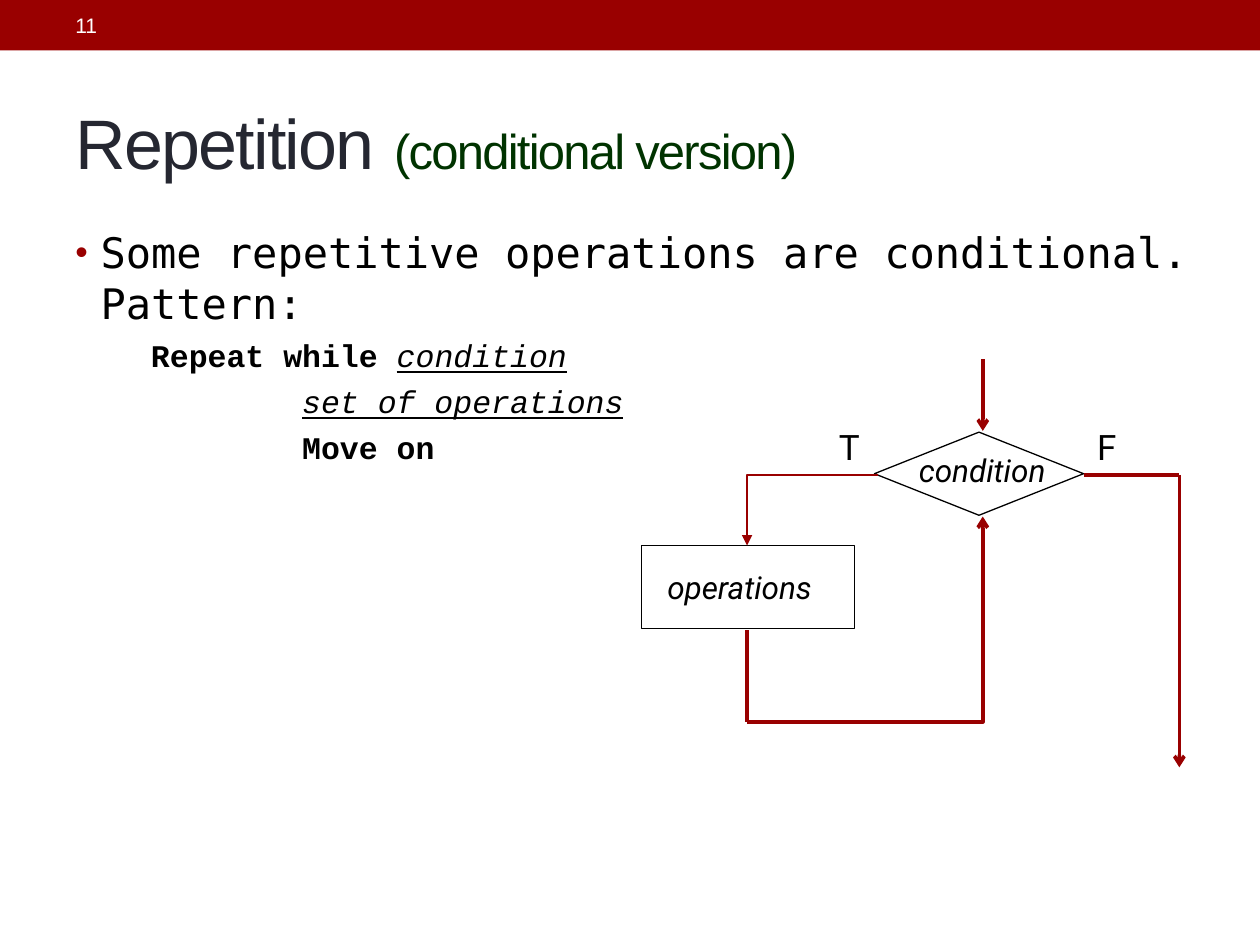
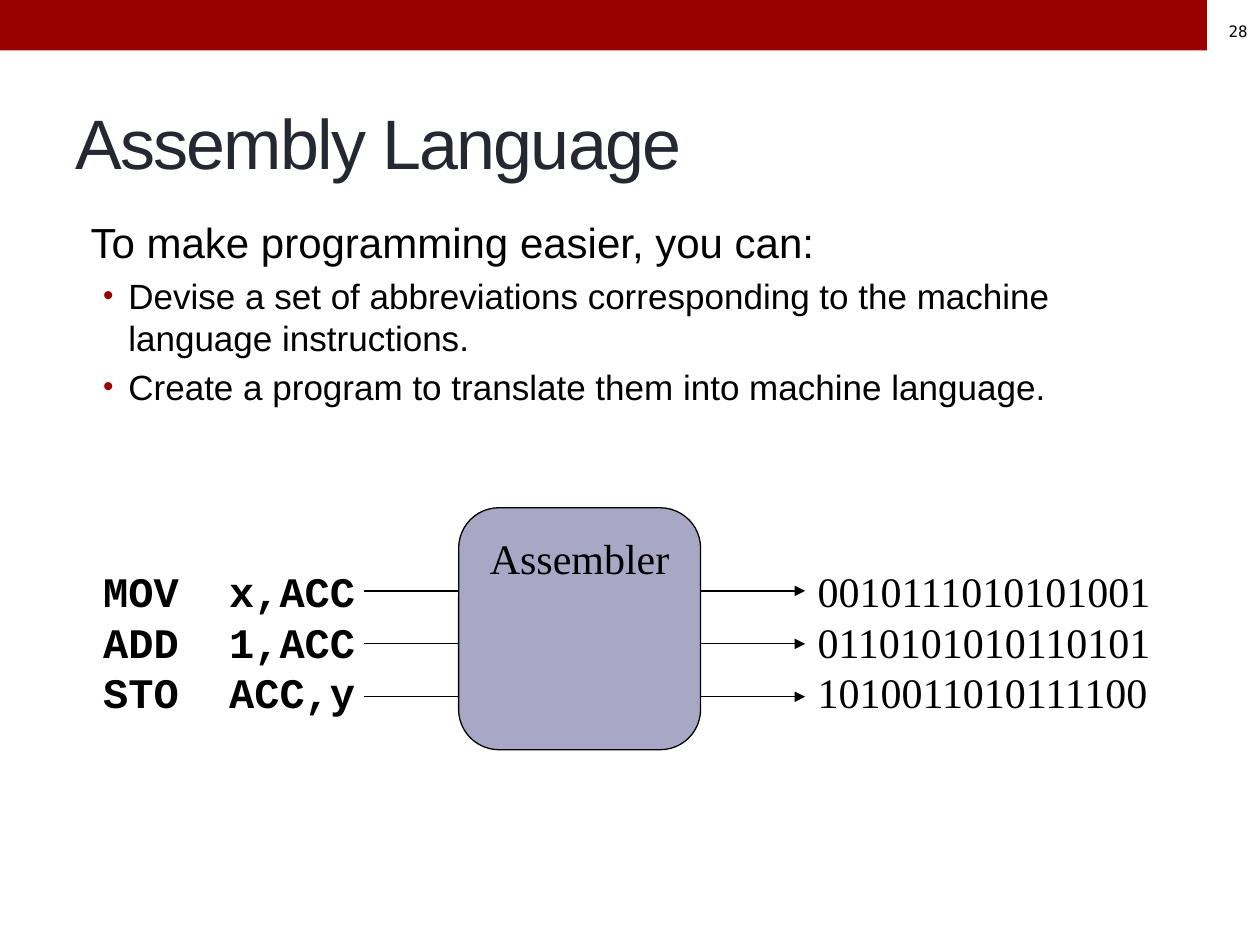
import pptx
import pptx.dml.color
import pptx.enum.shapes
import pptx.enum.text
import pptx.oxml
import pptx.oxml.ns
import pptx.util

COLORS = {
    "band": "990000", "title": "252731", "subtitle": "003300",
    "ink": "000000", "paper": "FFFFFF", "machine": "A8A8C6",
}
SANS, MONO, CODE = "Arial", "DejaVu Sans Mono", "Courier New"
LABEL, SERIF = "Roboto", "Times New Roman"

COLS, ROWS = 100, 75  # grid cells across and down the slide
THIN, THICK = 0.75, 2.08

SHAPES = pptx.enum.shapes.MSO_SHAPE
ANCHORS = pptx.enum.text.MSO_ANCHOR
ALIGNS = pptx.enum.text.PP_ALIGN
qn = pptx.oxml.ns.qn


def rgb(name):
    return pptx.dml.color.RGBColor.from_string(COLORS[name])


def add_xml(parent, tag, **attributes):
    child = parent.makeelement(qn(tag), attributes)
    parent.append(child)
    return child


def write(paragraph, text, size=24, font=SANS, color="ink", bold=False,
          italic=False, underline=False, tracking=0):
    """Add a formatted run to a paragraph."""
    run = paragraph.add_run()
    run.text = text
    run.font.size = pptx.util.Pt(size)
    run.font.name = font
    run.font.color.rgb = rgb(color)
    run.font.bold, run.font.italic, run.font.underline = bold, italic, underline
    if tracking:
        run._r.get_or_add_rPr().set("spc", str(tracking))


class Deck:
    """Holds the shared style and the slide being filled."""

    def __init__(self):
        self.show = pptx.Presentation()
        self.show.slide_width = pptx.util.Inches(10)
        self.show.slide_height = pptx.util.Inches(7.5)
        self.slide = None

    def x(self, columns):
        return round(self.show.slide_width * columns / COLS)

    def y(self, rows):
        return round(self.show.slide_height * rows / ROWS)

    def place(self, area):
        left, top, width, height = area
        return self.x(left), self.y(top), self.x(width), self.y(height)

    def new_slide(self, title, subtitle=""):
        self.slide = self.show.slides.add_slide(self.show.slide_layouts[6])
        self.slide.background.fill.solid()
        self.slide.background.fill.fore_color.rgb = rgb("paper")
        self.shape(SHAPES.RECTANGLE, (0, 0, 100, 4), "band")
        heading = self.textbox((5, 5.8, 90, 10.8), anchor=ANCHORS.MIDDLE)
        line = self.paragraph(heading)
        write(line, title, size=40, color="title", tracking=-100)
        if subtitle:
            write(line, " ", size=40, tracking=-100)
            write(line, subtitle, size=28, color="subtitle", tracking=-100)

    def shape(self, kind, area, fill, outline=None):
        shape = self.slide.shapes.add_shape(kind, *self.place(area))
        shape.shadow.inherit = False
        shape.fill.solid()
        shape.fill.fore_color.rgb = rgb(fill)
        if outline:
            shape.line.color.rgb = rgb(outline)
            shape.line.width = pptx.util.Pt(THIN)
        else:
            shape.line.fill.background()
        return shape

    def textbox(self, area, anchor=ANCHORS.TOP, wrap=True):
        frame = self.slide.shapes.add_textbox(*self.place(area)).text_frame
        frame.word_wrap = wrap
        frame.vertical_anchor = anchor
        return frame

    def paragraph(self, frame, margin=0, hanging=0, before=0, bullet=False,
                  align=ALIGNS.LEFT):
        first = frame.paragraphs[0]
        line = first if not first.runs else frame.add_paragraph()
        line.alignment = align
        line.space_before = pptx.util.Pt(before)
        properties = line._p.get_or_add_pPr()
        properties.set("marL", str(self.x(margin)))
        properties.set("indent", str(-self.x(hanging)))
        if bullet:
            tint = add_xml(properties, "a:buClr")
            add_xml(tint, "a:srgbClr", val=COLORS["band"])
            add_xml(properties, "a:buSzPct", val="85000")
            add_xml(properties, "a:buFont", typeface=SANS)
            add_xml(properties, "a:buChar", char="•")
        return line

    def label(self, area, text, align=ALIGNS.CENTER, before=4.1, **style):
        frame = self.textbox(area, anchor=ANCHORS.MIDDLE, wrap=False)
        line = self.paragraph(frame, before=before, align=align)
        write(line, text, font=LABEL, **style)

    def listing(self, area, lines, **style):
        frame = self.textbox(area, wrap=False)
        for text in lines:
            write(self.paragraph(frame), text, **style)

    def connect(self, start, end, color="band", weight=THICK, head=None,
                corner=False):
        """Draw a line; with corner, run across first and then up or down."""
        kinds = pptx.enum.shapes.MSO_CONNECTOR
        line = self.slide.shapes.add_connector(
            kinds.ELBOW if corner else kinds.STRAIGHT,
            self.x(start[0]), self.y(start[1]), self.x(end[0]), self.y(end[1]))
        line.line.color.rgb = rgb(color)
        line.line.width = pptx.util.Pt(weight)
        properties = line._element.spPr
        if corner:
            properties.find(qn("a:prstGeom")).set("prst", "bentConnector2")
        if head:
            add_xml(properties.find(qn("a:ln")), "a:tailEnd", type=head)
        add_xml(properties, "a:effectLst")


def repetition_slide(deck):
    deck.new_slide("Repetition", "(conditional version)")
    number = deck.textbox((5, 0.2, 31.7, 3.6), anchor=ANCHORS.MIDDLE)
    write(deck.paragraph(number), "11", size=12, color="paper")

    # Pattern in words
    pattern = deck.textbox((5, 17.5, 95, 51.7))
    intro = deck.paragraph(pattern, margin=2, hanging=2, before=4.8, bullet=True)
    write(intro, "Some repetitive operations are conditional. Pattern:", font=MONO)
    code = {"size": 18, "font": CODE}
    blank_to_fill = {"italic": True, "underline": True, **code}
    loop = deck.paragraph(pattern, margin=6, before=4.7)
    write(loop, "Repeat while ", bold=True, **code)
    write(loop, "condition", **blank_to_fill)
    step = deck.paragraph(pattern, margin=18, before=4.7)
    write(step, "set of operations", **blank_to_fill)
    leave = deck.paragraph(pattern, margin=18, before=4.7)
    write(leave, "Move on", bold=True, **code)

    # Flowchart nodes
    deck.shape(SHAPES.DIAMOND, (69.4, 34.3, 16.6, 6.6), "paper", "ink")
    deck.label((71.9, 35.3, 12.1, 4), "condition", size=18, italic=True)
    deck.shape(SHAPES.RECTANGLE, (50.9, 43.3, 16.9, 6.6), "paper", "ink")
    deck.label((51.5, 44.6, 14.4, 4), "operations", size=18, italic=True)
    for branch, left in (("T", 65.6), ("F", 86.1)):
        deck.label((left, 33.3, 3.7, 4.3), branch, align=ALIGNS.LEFT,
                   before=4.6, size=20)

    # Flow: true branch, loop back, entry, false branch
    operations_x, entry_x, exit_x = 59.3, 78, 93.6
    branch_y, return_y = 37.7, 57.3
    deck.connect((69.7, branch_y), (operations_x, 43.3), weight=THIN,
                 head="triangle", corner=True)
    deck.connect((operations_x, 50), (operations_x, return_y))
    deck.connect((operations_x, return_y), (entry_x, 41), head="arrow", corner=True)
    deck.connect((entry_x, 28.5), (entry_x, 34.2), head="arrow")
    deck.connect((86, branch_y), (exit_x, branch_y))
    deck.connect((exit_x, branch_y), (exit_x, 60.9), head="arrow")


def assembly_slide(deck):
    deck.new_slide("Assembly Language")

    # Steps
    steps = deck.textbox((4.2, 16.7, 85.8, 44.2))
    write(deck.paragraph(steps, margin=2, before=4.8),
          "To make programming easier, you can:")
    for text in (
        "Devise a set of abbreviations corresponding to the machine "
        "language instructions.",
        "Create a program to translate them into machine language.",
    ):
        write(deck.paragraph(steps, margin=5, hanging=2, before=4, bullet=True),
              text, size=20)

    # Translation from mnemonics to machine code
    for row in range(3):
        y = 46.9 + 4.2 * row
        deck.connect((28.9, y), (63.9, y), color="ink", weight=THIN, head="triangle")
    deck.listing((7.2, 44.4, 22, 13), ("MOV\tx,ACC", "ADD\t1,ACC", "STO\tACC,y"),
                 font=CODE, bold=True)
    deck.listing((63.9, 44.4, 28.7, 13),
                 ("0010111010101001", "0110101010110101", "1010011010111100"),
                 font=SERIF)
    assembler = deck.shape(SHAPES.FLOWCHART_ALTERNATE_PROCESS,
                           (36.4, 40.3, 19.2, 19.2), "machine", "ink").text_frame
    assembler.word_wrap = False
    assembler.vertical_anchor = ANCHORS.TOP
    assembler.margin_top = deck.y(1)
    write(deck.paragraph(assembler, align=ALIGNS.CENTER), "Assembler", font=SERIF)

    # Page number
    number = deck.shape(SHAPES.RECTANGLE, (95.8, 0, 4.2, 5), "paper").text_frame
    number.vertical_anchor = ANCHORS.MIDDLE
    write(deck.paragraph(number, align=ALIGNS.RIGHT), "28", size=9, font=MONO)


def main():
    deck = Deck()
    repetition_slide(deck)
    assembly_slide(deck)
    deck.show.save("out.pptx")


if __name__ == "__main__":
    main()
